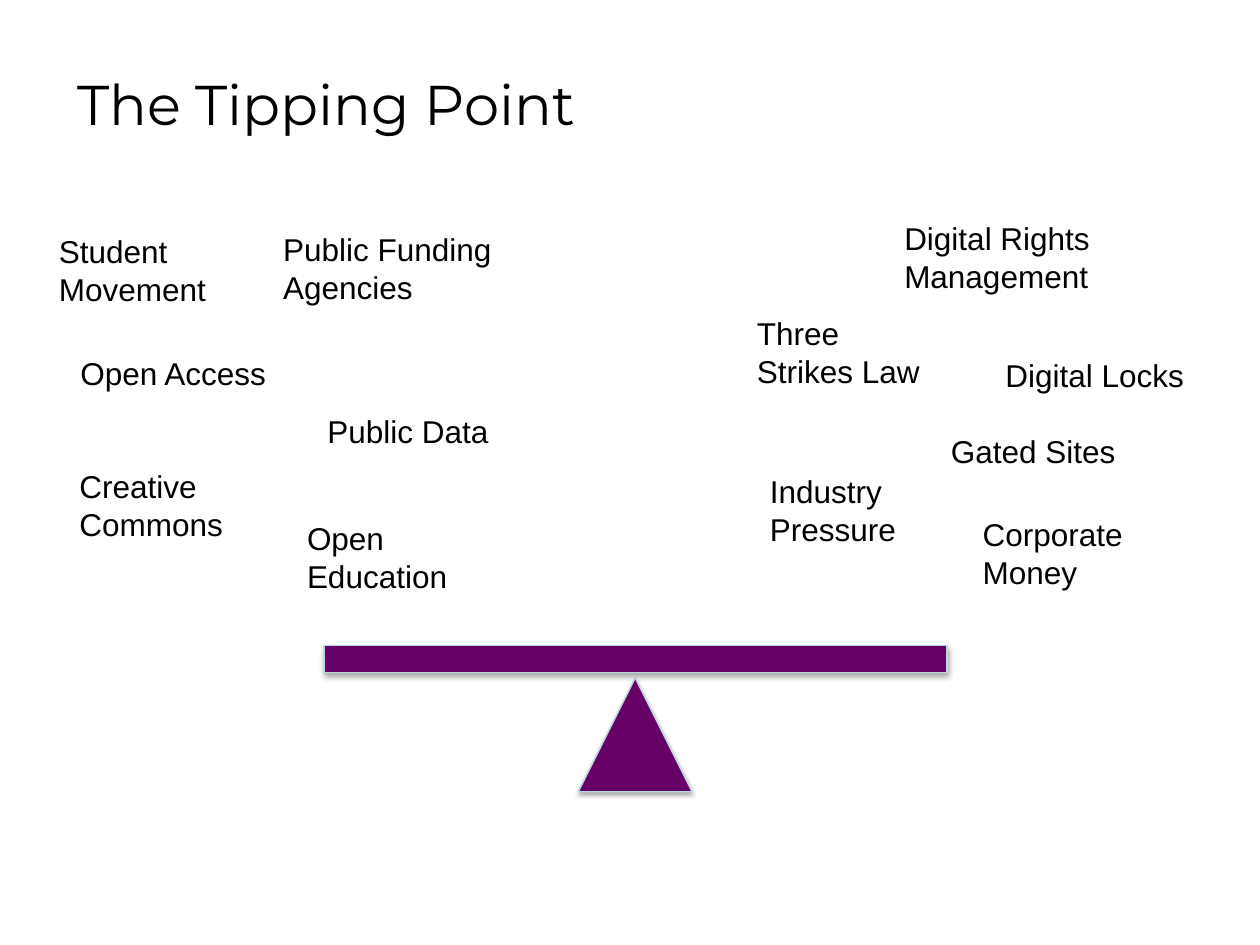
"""Build the Tipping Point slide: two sides of a debate above a balance."""
from dataclasses import dataclass

import lxml.etree
import pptx
import pptx.dml.color
import pptx.enum.shapes
import pptx.enum.text
import pptx.oxml
import pptx.oxml.ns
import pptx.util

Cm = pptx.util.Cm
Pt = pptx.util.Pt
RGBColor = pptx.dml.color.RGBColor


@dataclass(frozen=True)
class Theme:
    ink: str = "000000"
    balance: str = "660066"
    edge: str = "B6DCDF"
    title_font: str = "Montserrat"
    label_font: str = "Arial"
    title_size: int = 32
    label_size: int = 18


theme = Theme()


def write_text(shape, text, *, font, size, color, anchor):
    frame = shape.text_frame
    frame.word_wrap = True
    frame.vertical_anchor = anchor
    frame.text = text
    for paragraph in frame.paragraphs:
        paragraph.alignment = pptx.enum.text.PP_ALIGN.LEFT
        paragraph.font.name = font
        paragraph.font.size = Pt(size)
        paragraph.font.color.rgb = RGBColor.from_string(color)


presentation = pptx.Presentation()
presentation.slide_width = Cm(25.4)
presentation.slide_height = Cm(19.05)
slide = presentation.slides.add_slide(presentation.slide_layouts[5])

title = slide.shapes.title
title.left, title.top, title.width, title.height = Cm(1.3), Cm(1.02), Cm(19.46), Cm(2.13)
write_text(title, "The Tipping Point", font=theme.title_font, size=theme.title_size,
           color=theme.ink, anchor=pptx.enum.text.MSO_ANCHOR.MIDDLE)

shadow_xml = (
    f'<a:effectLst {pptx.oxml.ns.nsdecls("a")}>'
    f'<a:outerShdw blurRad="{Pt(3.1)}" dist="{Pt(1.8)}" dir="5400000" rotWithShape="0">'
    '<a:srgbClr val="000000"><a:alpha val="35000"/></a:srgbClr>'
    '</a:outerShdw></a:effectLst>'
)
balance_parts = [
    (pptx.enum.shapes.MSO_SHAPE.ISOSCELES_TRIANGLE, 11.66, 13.67, 2.29),
    (pptx.enum.shapes.MSO_SHAPE.MATH_MINUS, 4.27, 12.14, 17.09),
]
for kind, left, top, width in balance_parts:
    shape = slide.shapes.add_shape(kind, Cm(left), Cm(top), Cm(width), Cm(2.29))
    shape.fill.solid()
    shape.fill.fore_color.rgb = RGBColor.from_string(theme.balance)
    shape.line.color.rgb = RGBColor.from_string(theme.edge)
    shape.line.width = Pt(0.75)
    shape._element.spPr.append(pptx.oxml.parse_xml(shadow_xml))

one_line, two_lines = 1.02, 1.8
labels = [
    ("Digital Rights\nManagement", 17.98, 4.29, 4.67, two_lines),
    ("Digital Locks", 20.02, 7.06, 4.67, one_line),
    ("Gated Sites", 18.92, 8.59, 4.67, one_line),
    ("Three Strikes Law", 15.01, 6.2, 3.81, two_lines),
    ("Industry Pressure", 15.27, 9.4, 3.35, two_lines),
    ("Corporate Money", 19.56, 10.26, 4.67, two_lines),
    ("Open Access", 1.37, 7.01, 4.67, one_line),
    ("Creative Commons", 1.35, 9.3, 4.67, two_lines),
    ("Public Data", 6.35, 8.18, 4.67, one_line),
    ("Open Education", 5.94, 10.34, 3.86, two_lines),
    ("Student Movement", 0.94, 4.55, 3.58, two_lines),
    ("Public Funding Agencies", 5.46, 4.52, 5.51, two_lines),
]
for text, left, top, width, height in labels:
    label = slide.shapes.add_textbox(Cm(left), Cm(top), Cm(width), Cm(height))
    label.text_frame.auto_size = pptx.enum.text.MSO_AUTO_SIZE.SHAPE_TO_FIT_TEXT
    write_text(label, text, font=theme.label_font, size=theme.label_size,
               color=theme.ink, anchor=pptx.enum.text.MSO_ANCHOR.TOP)

presentation.save("out.pptx")
